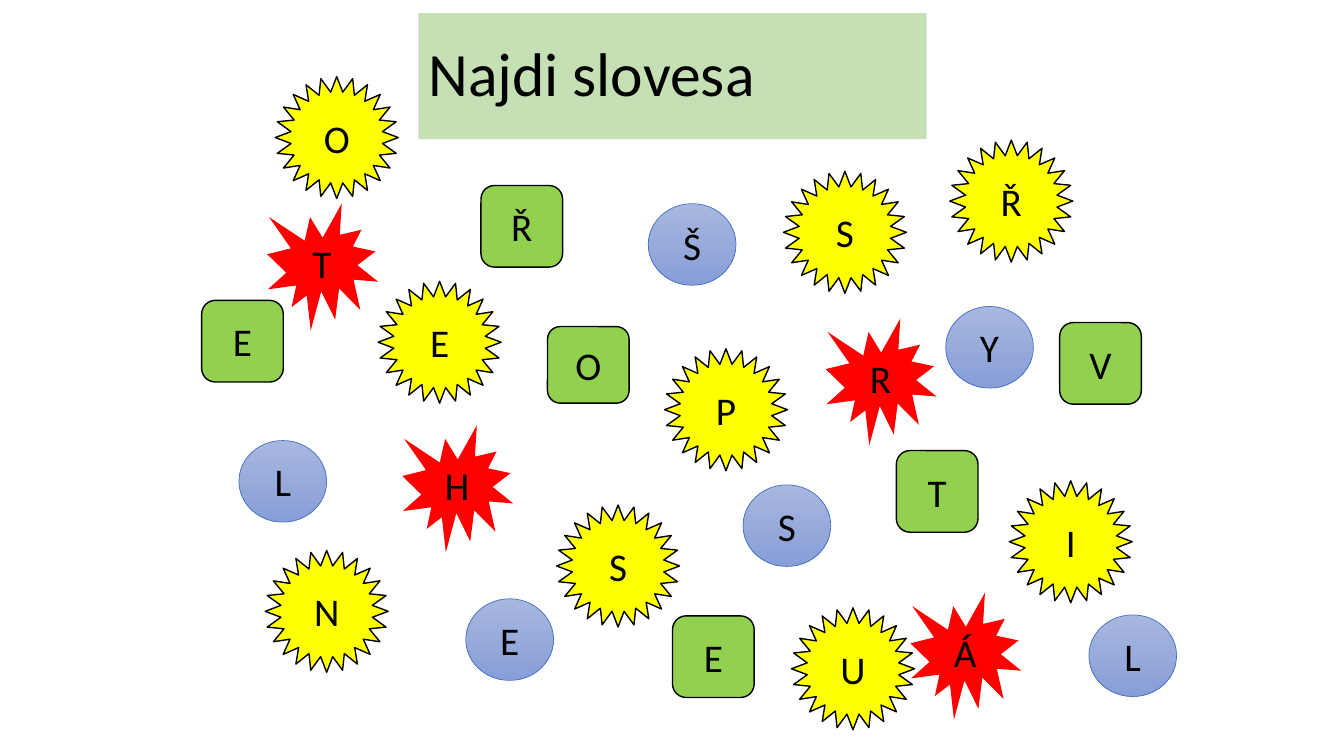
"""Build a Czech word-hunt slide with verbs hidden in groups of lettered shapes."""
from pptx import Presentation
from pptx.dml.color import RGBColor
from pptx.enum.shapes import MSO_SHAPE
from pptx.enum.text import MSO_ANCHOR, PP_ALIGN
from pptx.util import Inches, Pt

RECTANGLE = MSO_SHAPE.RECTANGLE
BURST = MSO_SHAPE.EXPLOSION1
CIRCLE = MSO_SHAPE.OVAL
STAR = MSO_SHAPE.STAR_24_POINT
SQUARE = MSO_SHAPE.ROUNDED_RECTANGLE
MIDDLE = MSO_ANCHOR.MIDDLE
LEFT, CENTER = PP_ALIGN.LEFT, PP_ALIGN.CENTER

TITLE = "Najdi slovesa"
TITLE_AREA = (4.15, 0.13, 5.04, 1.25)

BURSTS = [("T", 2.65, 2.02), ("Á", 9.03, 5.88), ("R", 8.19, 3.16), ("H", 3.99, 4.22)]
CIRCLES = [("Y", 9.38, 3.04), ("E", 4.62, 5.94), ("Š", 6.43, 2.02),
           ("L", 10.8, 6.1), ("S", 7.37, 4.81), ("L", 2.37, 4.37)]
STARS = [("S", 7.77, 1.7), ("I", 10.01, 4.77), ("P", 6.59, 3.46),
         ("N", 2.63, 5.46), ("E", 3.75, 2.79), ("Ř", 9.42, 1.39),
         ("S", 5.52, 5.01), ("O", 2.73, 0.76), ("U", 7.85, 6.03)]
SQUARES = [("Ř", 4.77, 1.84), ("E", 2, 2.98), ("V", 10.51, 3.2),
           ("E", 6.67, 6.11), ("T", 8.89, 4.47)]
LOW_SQUARES = [("O", 5.43, 3.24)]

THEME = {
    "font": "Calibri", "text": "000000", "title_size": 44, "letter_size": 28,
    "title": ["C5E0B4"], "red": ["FF0000"], "yellow": ["FFFF00"],
    "green": ["92D050"], "blue": ["A8B7DF", "889ED7"],
    "black_line": ("000000", 1), "blue_line": ("4472C4", 0.5),
}

GROUPS = [
    (BURSTS, BURST, (1.1, 1.26), "red", None),
    (CIRCLES, CIRCLE, (0.87, 0.81), "blue", "blue_line"),
    (STARS, STAR, (1.22, 1.21), "yellow", "black_line"),
    (SQUARES, SQUARE, (0.81, 0.81), "green", "black_line"),
    (LOW_SQUARES, SQUARE, (0.81, 0.76), "green", "black_line"),
]


def paint(box, colors, line):
    """Fill with one colour or a downward gradient, and draw the outline."""
    box.shadow.inherit = False
    if len(colors) == 1:
        box.fill.solid()
        box.fill.fore_color.rgb = RGBColor.from_string(colors[0])
    else:
        box.fill.gradient()
        box.fill.gradient_angle = 270
        for stop, color in zip(box.fill.gradient_stops, colors):
            stop.color.rgb = RGBColor.from_string(color)
    if line is None:
        box.line.fill.background()
    else:
        color, width = line
        box.line.color.rgb = RGBColor.from_string(color)
        box.line.width = Pt(width)


def write(box, text, size, align=CENTER, spacing=1.0):
    """Write one formatted paragraph in the middle of a shape."""
    frame = box.text_frame
    frame.word_wrap = True
    frame.vertical_anchor = MIDDLE
    para = frame.paragraphs[0]
    para.alignment = align
    para.line_spacing = spacing
    span = para.add_run()
    span.text = text
    span.font.name = THEME["font"]
    span.font.size = Pt(size)
    span.font.color.rgb = RGBColor.from_string(THEME["text"])


def add_box(page, kind, area, fill, line=None):
    """Add a painted preset shape at an area given in inches."""
    box = page.shapes.add_shape(kind, *(Inches(length) for length in area))
    paint(box, THEME[fill], THEME[line] if line else None)
    return box


def main():
    """Create the slide and save the deck."""
    deck = Presentation()
    deck.slide_width, deck.slide_height = Inches(13.33), Inches(7.5)
    page = deck.slides.add_slide(deck.slide_layouts[6])
    heading = add_box(page, RECTANGLE, TITLE_AREA, "title")
    write(heading, TITLE, THEME["title_size"], align=LEFT, spacing=0.9)
    for letters, kind, size, fill, line in GROUPS:
        for letter, left, top in letters:
            box = add_box(page, kind, (left, top, *size), fill, line)
            write(box, letter, THEME["letter_size"])
    deck.save("out.pptx")


if __name__ == "__main__":
    main()
